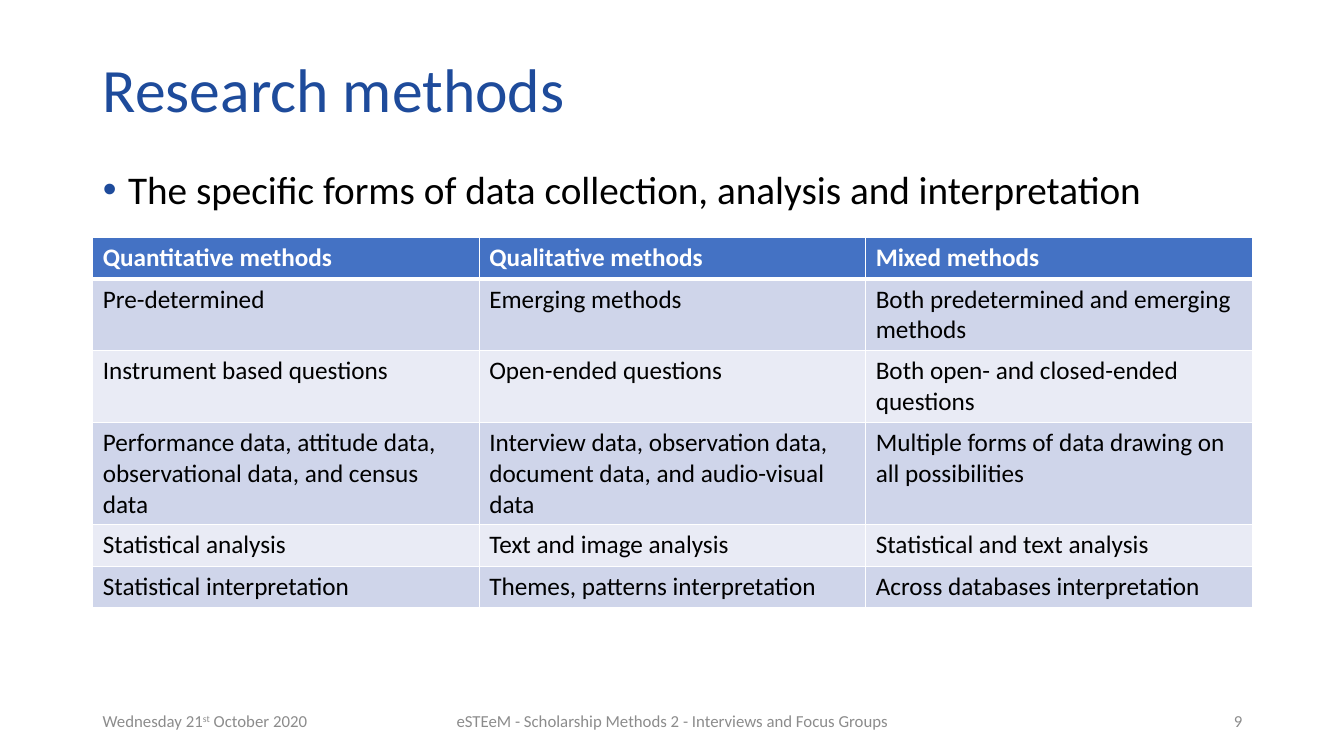
import dataclasses

import pptx
import pptx.dml.color
import pptx.enum.text
import pptx.oxml.ns
import pptx.util
from lxml import etree

Inches = pptx.util.Inches
Align = pptx.enum.text.PP_ALIGN
Anchor = pptx.enum.text.MSO_ANCHOR


@dataclasses.dataclass(frozen=True)
class Theme:
    font: str = "Calibri"
    accent: str = "1E4B9B"
    ink: str = "000000"
    muted: str = "8C8C8C"
    white: str = "FFFFFF"
    header: str = "4472C4"
    bands: tuple = ("CFD5EA", "E9EBF5")
    title_size: int = 44
    body_size: int = 28
    table_size: int = 18
    footer_size: int = 12
    rule: int = 1
    header_rule: int = 3


THEME = Theme()

METHODS = [
    ("Quantitative methods", "Qualitative methods", "Mixed methods"),
    ("Pre-determined", "Emerging methods", "Both predetermined and emerging methods"),
    ("Instrument based questions", "Open-ended questions", "Both open- and closed-ended questions"),
    (
        "Performance data, attitude data, observational data, and census data",
        "Interview data, observation data, document data, and audio-visual data",
        "Multiple forms of data drawing on all possibilities",
    ),
    ("Statistical analysis", "Text and image analysis", "Statistical and text analysis"),
    ("Statistical interpretation", "Themes, patterns interpretation", "Across databases interpretation"),
]


def rgb(value):
    return pptx.dml.color.RGBColor.from_string(value)


def add_child(parent, tag, **attributes):
    return etree.SubElement(parent, pptx.oxml.ns.qn(tag), **attributes)


def add_text(para, text, size, color=THEME.ink, bold=False, raised=False):
    span = para.add_run()
    span.text = text
    span.font.name = THEME.font
    span.font.size = pptx.util.Pt(size)
    span.font.color.rgb = rgb(color)
    span.font.bold = bold
    if raised:
        span._r.get_or_add_rPr().set("baseline", "30000")


def place(shape, box):
    shape.left, shape.top, shape.width, shape.height = map(Inches, box)


def prepare_frame(shape, anchor):
    frame = shape.text_frame
    frame.word_wrap = True
    frame.auto_size = pptx.enum.text.MSO_AUTO_SIZE.NONE
    frame.vertical_anchor = anchor
    return frame.paragraphs[0]


def fill_title(page, box):
    title = page.shapes.title
    place(title, box)
    para = prepare_frame(title, Anchor.MIDDLE)
    para.alignment = Align.LEFT
    para.line_spacing = 0.9
    add_text(para, "Research methods", THEME.title_size, color=THEME.accent)


def fill_body(page, box):
    body = page.placeholders[1]
    place(body, box)
    para = prepare_frame(body, Anchor.TOP)
    para.line_spacing = 0.9
    para.space_before = pptx.util.Pt(0)
    properties = para._p.get_or_add_pPr()
    properties.set("marL", str(Inches(0.25)))
    properties.set("indent", str(Inches(-0.25)))
    add_child(add_child(properties, "a:buClr"), "a:srgbClr", val=THEME.accent)
    add_child(properties, "a:buFont", typeface="Arial")
    add_child(properties, "a:buChar", char="•")
    add_text(para, "The specific forms of data collection, analysis and interpretation", THEME.body_size)


def set_borders(cell, top, bottom):
    properties = cell._tc.get_or_add_tcPr()
    widths = {"a:lnL": THEME.rule, "a:lnR": THEME.rule, "a:lnT": top, "a:lnB": bottom}
    for position, (tag, width) in enumerate(widths.items()):
        line = add_child(properties, tag, w=str(pptx.util.Pt(width)))
        add_child(add_child(line, "a:solidFill"), "a:srgbClr", val=THEME.white)
        properties.insert(position, line)


def add_methods_table(page, box, row_height=0.41):
    frame = page.shapes.add_table(len(METHODS), len(METHODS[0]), *map(Inches, box))
    table = frame.table
    for row_index, texts in enumerate(METHODS):
        heading = row_index == 0
        fill = THEME.header if heading else THEME.bands[(row_index - 1) % 2]
        color = THEME.white if heading else THEME.ink
        top = THEME.header_rule if row_index == 1 else THEME.rule
        bottom = THEME.header_rule if heading else THEME.rule
        table.rows[row_index].height = Inches(row_height)
        for column_index, text in enumerate(texts):
            cell = table.cell(row_index, column_index)
            cell.fill.solid()
            cell.fill.fore_color.rgb = rgb(fill)
            set_borders(cell, top, bottom)
            add_text(cell.text_frame.paragraphs[0], text, THEME.table_size, color=color, bold=heading)


def add_footer(page, box):
    left, top, width, height = box
    side, middle = 3, 4.5
    date = [("Wednesday 21", False), ("st", True), (" October 2020", False)]
    event = [("eSTEeM - Scholarship Methods 2 - Interviews and Focus Groups", False)]
    parts = [
        (left, side, Align.LEFT, date),
        (left + (width - middle) / 2, middle, Align.CENTER, event),
        (left + width - side, side, Align.RIGHT, [("9", False)]),
    ]
    for part_left, part_width, alignment, pieces in parts:
        label = page.shapes.add_textbox(*map(Inches, (part_left, top, part_width, height)))
        para = prepare_frame(label, Anchor.MIDDLE)
        para.alignment = alignment
        for text, raised in pieces:
            add_text(para, text, THEME.footer_size, color=THEME.muted, raised=raised)


def build_table_page(deck, left=0.92, width=11.5):
    page = deck.slides.add_slide(deck.slide_layouts[1])
    fill_title(page, (left, 0.4, width, 1.04))
    fill_body(page, (left, 1.64, width, 5.12))
    add_footer(page, (left, 6.95, width, 0.4))
    add_methods_table(page, (left, 2.36, width, 2.46))


def main():
    deck = pptx.Presentation()
    deck.slide_width = Inches(13.33)
    deck.slide_height = Inches(7.5)
    build_table_page(deck)
    deck.save("out.pptx")


if __name__ == "__main__":
    main()
